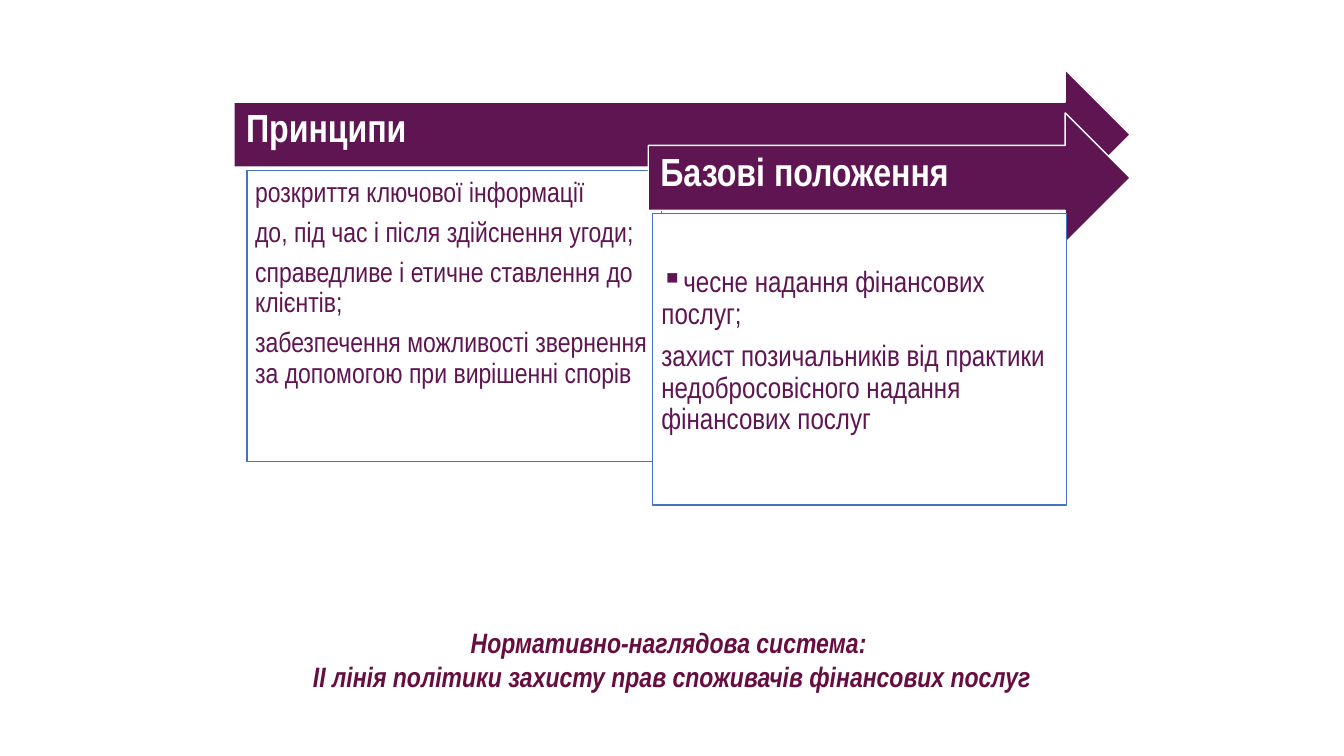
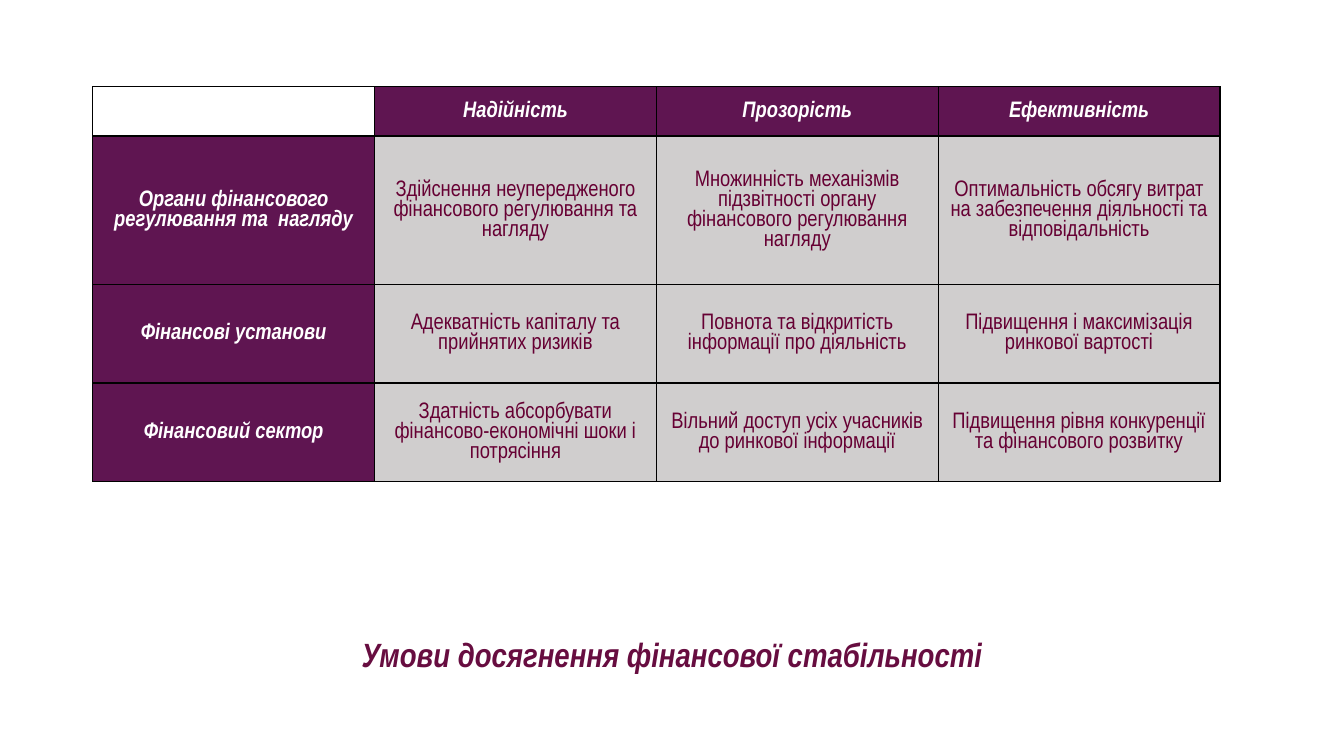
"""Build two slides on consumer protection and financial stability."""
import lxml.etree
import pptx
import pptx.dml.color
import pptx.enum.shapes
import pptx.enum.text
import pptx.oxml.ns
import pptx.util

Inches, Pt = pptx.util.Inches, pptx.util.Pt
RGB = pptx.dml.color.RGBColor.from_string
SHAPE = pptx.enum.shapes.MSO_SHAPE
ANCHOR = pptx.enum.text.MSO_ANCHOR
ALIGN = pptx.enum.text.PP_ALIGN
qn = pptx.oxml.ns.qn

THEME = {
    "plum": RGB("5F1551"), "wine": RGB("670D40"), "cherry": RGB("660033"),
    "white": RGB("FFFFFF"), "grey": RGB("D0CECE"), "blue": RGB("4472C4"),
    "font": "Arial Narrow", "border": "000000",
    "heading": 28, "caption": 20, "big_caption": 24, "cell": 16,
}
CENTRED = {"alignment": ALIGN.CENTER}
CELL_PARAGRAPH = {"alignment": ALIGN.CENTER, "line_spacing": 0.95}


def write(frame, lines, size, colour, paragraph_format, bold=False, italic=False, bullets=()):
    """Fill a text frame with equally formatted paragraphs."""
    font_format = {"name": THEME["font"], "size": Pt(size), "bold": bold, "italic": italic}
    frame.text = "\n".join(lines)
    for paragraph in frame.paragraphs:
        if paragraph.text in bullets:
            properties = paragraph._p.get_or_add_pPr()
            properties.set("marL", "0")
            properties.set("indent", "0")
            lxml.etree.SubElement(properties, qn("a:buChar")).set("char", "▪")
        for name, value in paragraph_format.items():
            setattr(paragraph, name, value)
        for run in paragraph.runs:
            for name, value in font_format.items():
                setattr(run.font, name, value)
            run.font.color.rgb = colour


def add_block(slide, preset, box, fill, line, anchor, insets):
    """Add a filled shape and return its text frame."""
    block = slide.shapes.add_shape(preset, *map(Inches, box))
    block.shadow.inherit = False
    block.fill.solid()
    block.fill.fore_color.rgb = fill
    if line is None:
        block.line.fill.background()
    else:
        block.line.color.rgb = line
        block.line.width = Pt(1)
    frame = block.text_frame
    frame.word_wrap = True
    frame.vertical_anchor = anchor
    for side, inset in zip(("left", "top", "right", "bottom"), insets):
        setattr(frame, f"margin_{side}", Inches(inset))
    return frame


deck = pptx.Presentation()
deck.slide_width, deck.slide_height = Inches(13.33), Inches(7.5)

captions = [
    (6.16, 0.77, THEME["caption"], [
        "Нормативно-наглядова система: ",
        "ІІ лінія політики захисту прав споживачів фінансових послуг"]),
    (6.24, 0.5, THEME["big_caption"], ["Умови досягнення фінансової стабільності"]),
]
slides = []
for top, height, size, lines in captions:
    slide = deck.slides.add_slide(deck.slide_layouts[6])
    caption = add_block(slide, SHAPE.RECTANGLE, (0, top, 13.33, height), THEME["white"], None,
                        ANCHOR.TOP, (0.1, 0.05, 0.1, 0.05))
    write(caption, lines, size, THEME["wine"], CENTRED, bold=True, italic=True)
    slides.append(slide)
policy, stability = slides

honest_service = "чесне надання фінансових послуг;"
arrows_right = 11.21
stages = [
    ("Принципи", 2.32, 0.69, 2.45, 20, (0.08, 0.08, 0.08, 0.08), [
        "розкриття ключової інформації",
        "до, під час і після здійснення угоди;",
        "справедливе і етичне ставлення до клієнтів;",
        "забезпечення можливості звернення за допомогою при вирішенні спорів"]),
    ("Базові положення", 6.43, 1.12, 6.47, 21, (0.09, 0.53, 0.09, 0.09), [
        honest_service,
        "захист позичальників від практики недобросовісного надання фінансових послуг"]),
]
for heading, left, top, details_left, size, insets, details in stages:
    arrow = add_block(policy, SHAPE.RIGHT_ARROW, (left, top, arrows_right - left, 1.29),
                      THEME["plum"], THEME["white"], ANCHOR.MIDDLE, (0.12, 0.12, 0.28, 0.21))
    panel = add_block(policy, SHAPE.RECTANGLE, (details_left, top + 1, 4.11, 2.89),
                      THEME["white"], THEME["blue"], ANCHOR.TOP, insets)
    for frame, lines, points, colour, bold in (
            (arrow, [heading], THEME["heading"], THEME["white"], True),
            (panel, details, size, THEME["plum"], False)):
        spacing = {"alignment": ALIGN.LEFT, "line_spacing": 0.9, "space_after": Pt(0.35 * points)}
        write(frame, lines, points, colour, spacing, bold=bold, bullets=(honest_service,))

conditions = [
    ["", "Надійність", "Прозорість", "Ефективність"],
    ["Органи фінансового регулювання та  нагляду",
     "Здійснення неупередженого фінансового регулювання та нагляду",
     "Множинність механізмів підзвітності органу фінансового регулювання нагляду",
     "Оптимальність обсягу витрат на забезпечення діяльності та відповідальність"],
    ["Фінансові установи",
     "Адекватність капіталу та прийнятих ризиків",
     "Повнота та відкритість інформації про діяльність",
     "Підвищення і максимізація ринкової вартості"],
    ["Фінансовий сектор",
     "Здатність абсорбувати фінансово-економічні шоки і потрясіння",
     "Вільний доступ усіх учасників до ринкової інформації",
     "Підвищення рівня конкуренції та фінансового розвитку"],
]
row_heights = [0.49, 1.47, 0.98, 0.98]
grid = stability.shapes.add_table(len(conditions), len(conditions[0]), Inches(0.92), Inches(0.86),
                                  Inches(11.18), Inches(sum(row_heights))).table
cell_format = {"vertical_anchor": ANCHOR.MIDDLE, "margin_left": Inches(0.07),
               "margin_right": Inches(0.07), "margin_top": 0, "margin_bottom": 0}
for row, (texts, height) in enumerate(zip(conditions, row_heights)):
    grid.rows[row].height = Inches(height)
    for column, text in enumerate(texts):
        cell = grid.cell(row, column)
        for name, value in cell_format.items():
            setattr(cell, name, value)
        for side in ("lnL", "lnR", "lnT", "lnB"):
            border = lxml.etree.SubElement(cell._tc.get_or_add_tcPr(), qn(f"a:{side}"))
            border.set("w", str(Pt(1)))
            stroke = lxml.etree.SubElement(border, qn("a:solidFill"))
            lxml.etree.SubElement(stroke, qn("a:srgbClr")).set("val", THEME["border"])
        is_header = row == 0 or column == 0
        cell.fill.solid()
        cell.fill.fore_color.rgb = THEME["white" if not text else "plum" if is_header else "grey"]
        if text:
            write(cell.text_frame, [text], THEME["cell"], THEME["white" if is_header else "cherry"],
                  CELL_PARAGRAPH, bold=is_header, italic=is_header)

deck.save("out.pptx")
